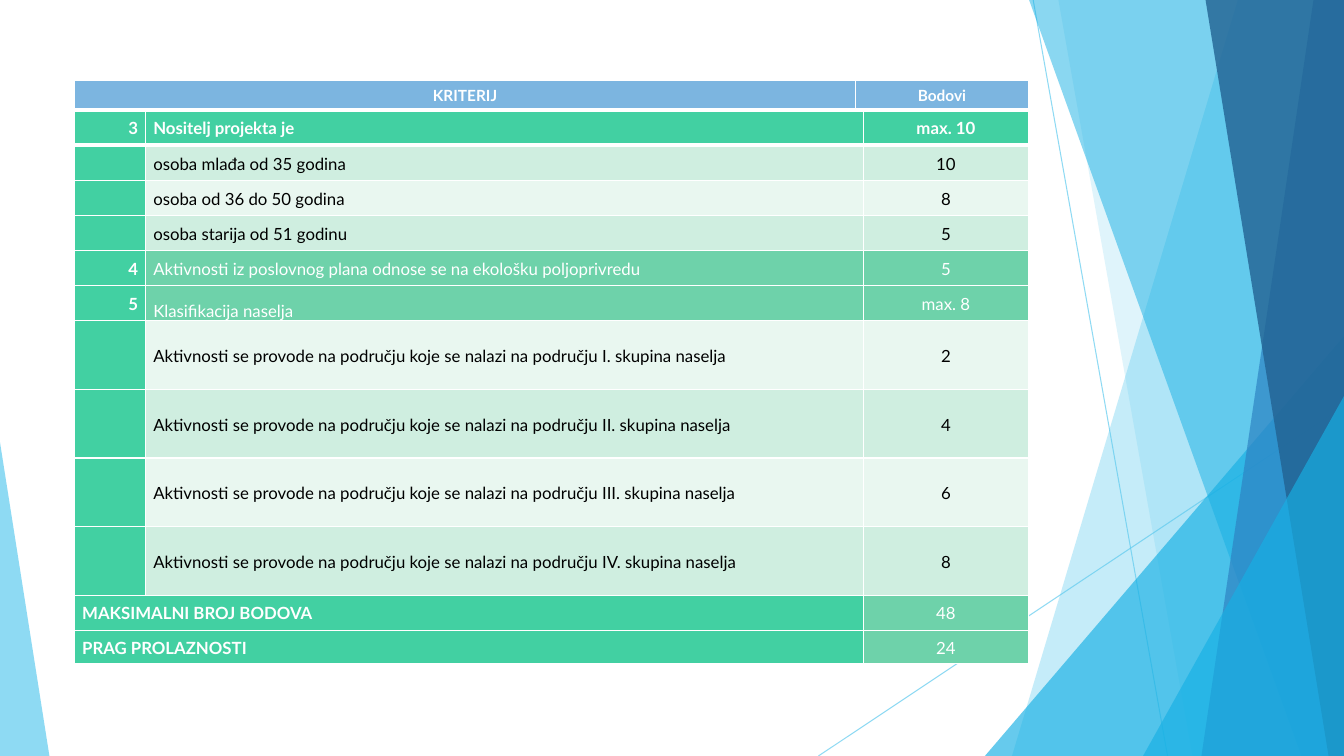
from dataclasses import dataclass

from lxml import etree
from pptx import Presentation
from pptx.dml.color import RGBColor
from pptx.enum.shapes import MSO_CONNECTOR, MSO_SHAPE
from pptx.enum.text import MSO_ANCHOR, PP_ALIGN
from pptx.oxml.ns import qn
from pptx.util import Pt

STRAIGHT, TRIANGLE = MSO_CONNECTOR.STRAIGHT, MSO_SHAPE.ISOSCELES_TRIANGLE
LEFT, CENTER, RIGHT = PP_ALIGN.LEFT, PP_ALIGN.CENTER, PP_ALIGN.RIGHT
MIDDLE, BOTTOM = MSO_ANCHOR.MIDDLE, MSO_ANCHOR.BOTTOM
WIDTH, HEIGHT = 960, 540


@dataclass(frozen=True)
class Theme:
    font: str = "Lato"
    body_size: int = 12
    header_size: int = 11
    white: str = "FFFFFF"
    black: str = "000000"
    header: str = "7CB5E0"
    green: str = "42D0A2"
    soft_green: str = "6ED2AA"
    band_dark: str = "CFEEE0"
    band_light: str = "E9F7F0"
    sky: str = "5FCBEF"
    cyan: str = "17B0E4"
    blue: str = "2E83C3"
    navy: str = "226292"


theme = Theme()


def paint(fill, color, opacity):
    """Give a fill a solid colour with an opacity in percent."""
    fill.solid()
    fill.fore_color.rgb = RGBColor.from_string(color)
    tint = fill._xPr.find(qn("a:solidFill"))[0]
    etree.SubElement(tint, qn("a:alpha"), val=str(opacity * 1000))


def write_cell(cell, text, *, fill, color=theme.white, size=theme.body_size,
               bold=False, align=LEFT, anchor=MIDDLE, top=1, bottom=1):
    """Fill a table cell, with white borders; top and bottom are their widths."""
    cell.margin_left = cell.margin_right = Pt(5.4)
    cell.margin_top = cell.margin_bottom = 0
    cell.vertical_anchor = anchor
    properties = cell._tc.get_or_add_tcPr()
    for side, width in (("lnL", 1), ("lnR", 1), ("lnT", top), ("lnB", bottom)):
        border = etree.SubElement(properties, qn(f"a:{side}"), w=str(Pt(width)))
        solid = etree.SubElement(border, qn("a:solidFill"))
        etree.SubElement(solid, qn("a:srgbClr"), val=theme.white)
    cell.fill.solid()
    cell.fill.fore_color.rgb = RGBColor.from_string(fill)
    if text:
        para = cell.text_frame.paragraphs[0]
        para.alignment, para.line_spacing = align, 1.07
        span = para.add_run()
        span.text = text
        span.font.name, span.font.size, span.font.bold = theme.font, Pt(size), bold
        span.font.color.rgb = RGBColor.from_string(color)


deck = Presentation()
deck.slide_width, deck.slide_height = Pt(WIDTH), Pt(HEIGHT)
page = deck.slides.add_slide(deck.slide_layouts[6])

# Thin crossing lines
for start_x, start_y, end_x in ((738, 0, 834), (WIDTH, 290, 584.6)):
    line = page.shapes.add_connector(
        STRAIGHT, Pt(start_x), Pt(start_y), Pt(end_x), Pt(HEIGHT))
    line.line.width = Pt(0.75)
    paint(line.line.fill, theme.sky, 70)
    etree.SubElement(line._element.spPr, qn("a:effectLst"))

# Shards: a band runs to the right edge from its upper and lower left corner,
# a triangle stands on the bottom edge (left, top, width, tip)
shards = [
    ("band", (884.2, 722.9), theme.sky, 36),
    ("band", (756, 851.8), theme.sky, 20),
    ("triangle", (703.5, 240, 256.5, 1), theme.cyan, 66),
    ("band", (735.1, 929.5), theme.cyan, 50),
    ("band", (938.2, 858.2), theme.blue, 70),
    ("band", (861.1, 949), theme.navy, 80),
    ("triangle", (816.5, 283, 143.5, 1), theme.cyan, 66),
    ("triangle", (0, 316, 35.3, 0), theme.sky, 70),
]
for kind, place, color, opacity in shards:
    if kind == "band":
        upper, lower = place
        outline = page.shapes.build_freeform(Pt(upper), 0)
        outline.add_line_segments(
            [(Pt(WIDTH), 0), (Pt(WIDTH), Pt(HEIGHT)), (Pt(lower), Pt(HEIGHT))])
        shard = outline.convert_to_shape()
    else:
        left, top, width, tip = place
        shard = page.shapes.add_shape(
            TRIANGLE, Pt(left), Pt(top), Pt(width), Pt(HEIGHT - top))
        shard.adjustments[0] = tip
    paint(shard.fill, color, opacity)
    shard.line.fill.background()
    shard.shadow.inherit = False

# Criteria: number, wording, points, kind of row, row height
group_text = "Aktivnosti se provode na području koje se nalazi na području {}. skupina naselja"
criteria = [
    ("3", "Nositelj projekta je", "max. 10", "main", 25.1),
    ("", "osoba mlađa od 35 godina", "10", "option", 25.1),
    ("", "osoba od 36 do 50 godina", "8", "option", 25.1),
    ("", "osoba starija od 51 godinu", "5", "option", 25.1),
    ("4", "Aktivnosti iz poslovnog plana odnose se na ekološku poljoprivredu",
     "5", "section", 25.1),
    ("5", "Klasifikacija naselja", "max. 8", "section", 25.1),
    *(("", group_text.format(numeral), points, "option", 49)
      for numeral, points in (("I", "2"), ("II", "4"), ("III", "6"), ("IV", "8"))),
    ("MAKSIMALNI BROJ BODOVA", "", "48", "total", 25.1),
    ("PRAG PROLAZNOSTI", "", "24", "total", 24),
]
column_widths = (50.8, 512.6, 118)
table = page.shapes.add_table(
    len(criteria), 3, Pt(53.3), Pt(78.7), Pt(sum(column_widths)),
    Pt(sum(entry[-1] for entry in criteria))).table
table.first_row = table.horz_banding = False
for column, width in zip(table.columns, column_widths):
    column.width = Pt(width)

for index, (number, wording, points, kind, height) in enumerate(criteria):
    table.rows[index].height = Pt(height)
    number_cell, wording_cell, points_cell = table.rows[index].cells
    fill = {"main": theme.green, "section": theme.soft_green, "total": theme.soft_green,
            "option": theme.band_dark if index % 2 else theme.band_light}[kind]
    color = theme.black if kind == "option" else theme.white
    edges = {"top": 3 if index == 1 else 1, "bottom": 3 if index == 0 else 1}
    if kind == "total":
        number_cell.merge(wording_cell)
    write_cell(number_cell, number, fill=theme.green, bold=True,
               align=LEFT if kind == "total" else RIGHT, **edges)
    write_cell(wording_cell, wording, fill=fill, color=color, bold=kind == "main",
               anchor=BOTTOM if number == "5" else MIDDLE, **edges)
    write_cell(points_cell, points, fill=fill, color=color, bold=kind == "main",
               align=CENTER, **edges)

# Header strip above the criteria
header_widths = (557.8, 123.6)
header = page.shapes.add_table(
    1, 2, Pt(53.3), Pt(57.6), Pt(sum(header_widths)), Pt(20.8)).table
header.first_row = header.horz_banding = False
header.rows[0].height = Pt(20.8)
for index, label in enumerate(("KRITERIJ", "Bodovi")):
    header.columns[index].width = Pt(header_widths[index])
    write_cell(header.cell(0, index), label, fill=theme.header, size=theme.header_size,
               bold=True, align=CENTER, bottom=3)

deck.save("out.pptx")
